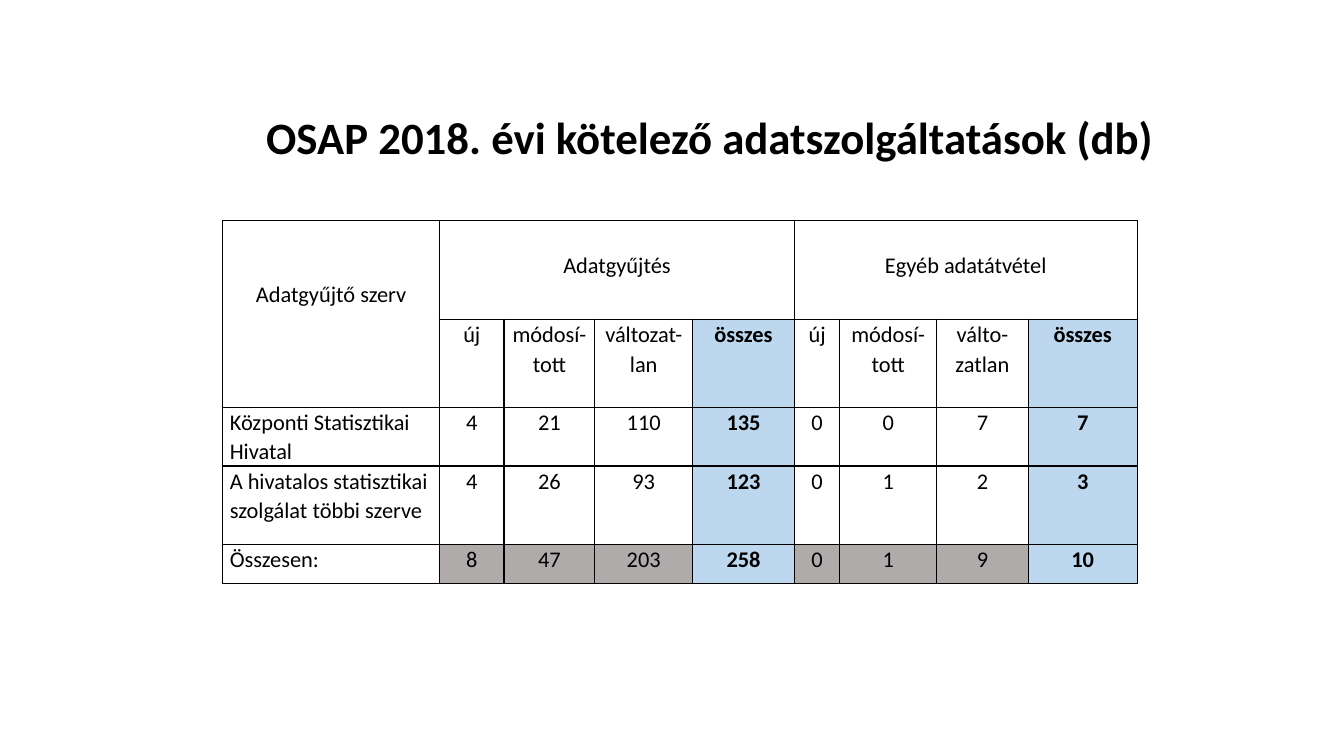
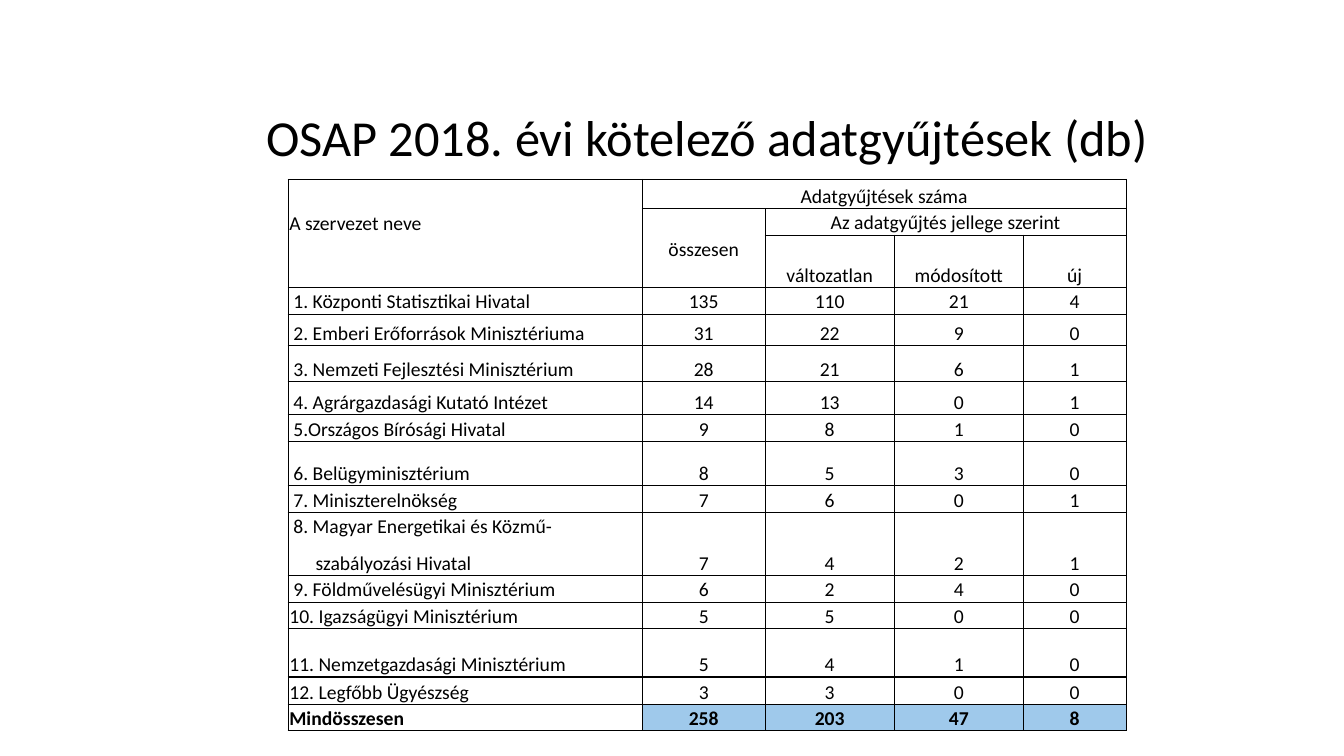
from dataclasses import dataclass
from typing import Callable, Optional

from lxml.etree import SubElement
from pptx import Presentation
from pptx.dml.color import RGBColor
from pptx.enum.text import MSO_ANCHOR, PP_ALIGN
from pptx.oxml.ns import qn
from pptx.presentation import Presentation as Deck
from pptx.slide import Slide
from pptx.table import _Cell as TableCell
from pptx.util import Inches, Pt


# Shared look
@dataclass(frozen=True)
class Theme:
    font: str = "Calibri"
    text: str = "000000"
    border: str = "000000"
    background: str = "FFFFFF"
    total_column: str = "BDD7EE"
    total_row: str = "AFABAB"
    grand_total: str = "9FC9EB"
    border_width: float = 1
    line_spacing: float = 1.07
    title_spacing: float = 0.9


THEME = Theme()
TITLE_ONLY = 5


@dataclass(frozen=True)
class CellStyle:
    """Margins are in inches: left, top, right, bottom."""
    margins: tuple[float, float, float, float]
    fill: str = THEME.background
    bold: bool = False
    align: PP_ALIGN = PP_ALIGN.CENTER
    anchor: MSO_ANCHOR = MSO_ANCHOR.TOP


@dataclass(frozen=True)
class Span:
    row: int
    column: int
    height: int
    width: int


@dataclass(frozen=True)
class TablePage:
    title: str
    title_size: int
    title_bold: bool
    left: float
    top: float
    columns: list[float]
    rows: list[float]
    texts: list[list[Optional[str]]]
    spans: list[Span]
    text_size: int
    space_after: int
    style: Callable[[int, int], CellStyle]


# First page: obligatory data supplies
SUPPLY_TEXTS = [
    ["Adatgyűjtő szerv", "Adatgyűjtés", None, None, None, "Egyéb adatátvétel", None, None, None],
    [None, "új", "módosí-tott", "változat-lan", "összes", "új", "módosí-tott", "válto-zatlan", "összes"],
    ["Központi Statisztikai Hivatal", "4", "21", "110", "135", "0", "0", "7", "7"],
    ["A hivatalos statisztikai szolgálat többi szerve", "4", "26", "93", "123", "0", "1", "2", "3"],
    ["Összesen:", "8", "47", "203", "258", "0", "1", "9", "10"],
]


def supply_style(row: int, column: int) -> CellStyle:
    is_total = row > 0 and column in (4, 8)
    fill = THEME.background
    if is_total:
        fill = THEME.total_column
    elif row == len(SUPPLY_TEXTS) - 1 and column > 0:
        fill = THEME.total_row
    top = 0 if row > 0 else 0.29 if column > 0 else 0.58
    is_label = column == 0 and row > 1
    return CellStyle((0.07, top, 0.07, 0), fill, is_total,
                     PP_ALIGN.LEFT if is_label else PP_ALIGN.CENTER)


# Second page: obligatory data collections by organisation
COLLECTION_TEXTS = [
    ["A szervezet neve", "Adatgyűjtések száma", None, None, None],
    [None, "összesen", "Az adatgyűjtés jellege szerint", None, None],
    [None, None, "változatlan", "módosított", "új"],
    ["1. Központi Statisztikai Hivatal", "135", "110", "21", "4"],
    ["2. Emberi Erőforrások Minisztériuma", "31", "22", "9", "0"],
    ["3. Nemzeti Fejlesztési Minisztérium", "28", "21", "6", "1"],
    ["4. Agrárgazdasági Kutató Intézet", "14", "13", "0", "1"],
    ["5.Országos Bírósági Hivatal", "9", "8", "1", "0"],
    ["6. Belügyminisztérium", "8", "5", "3", "0"],
    ["7. Miniszterelnökség", "7", "6", "0", "1"],
    ["8. Magyar Energetikai és Közmű-\nszabályozási Hivatal", "7", "4", "2", "1"],
    ["9. Földművelésügyi Minisztérium", "6", "2", "4", "0"],
    ["10. Igazságügyi Minisztérium", "5", "5", "0", "0"],
    ["11. Nemzetgazdasági Minisztérium", "5", "4", "1", "0"],
    ["12. Legfőbb Ügyészség", "3", "3", "0", "0"],
    ["Mindösszesen", "258", "203", "47", "8"],
]


def collection_style(row: int, column: int) -> CellStyle:
    is_total = row == len(COLLECTION_TEXTS) - 1
    is_label = column == 0
    is_heading = row == 0 and is_label
    has_one_digit = is_label and 3 <= row <= 11
    is_middle = is_heading or (row, column) == (1, 1)
    return CellStyle(
        (0.05 if has_one_digit else 0.01, 0.01, 0.01, 0.22 if is_heading else 0),
        THEME.grand_total if is_total and not is_label else THEME.background,
        is_total,
        PP_ALIGN.LEFT if is_label else PP_ALIGN.CENTER,
        MSO_ANCHOR.MIDDLE if is_middle else MSO_ANCHOR.BOTTOM,
    )


PAGES = [
    TablePage(
        title="OSAP 2018. évi kötelező adatszolgáltatások (db)",
        title_size=32, title_bold=True, left=2.21, top=2.19,
        columns=[2.15, 0.64, 0.9, 0.97, 1.01, 0.45, 0.96, 0.91, 1.08],
        rows=[0.98, 0.87, 0.58, 0.78, 0.39],
        texts=SUPPLY_TEXTS,
        spans=[Span(0, 0, 2, 1), Span(0, 1, 1, 4), Span(0, 5, 1, 4)],
        text_size=16, space_after=0, style=supply_style,
    ),
    TablePage(
        title="OSAP 2018. évi kötelező adatgyűjtések (db)",
        title_size=36, title_bold=False, left=2.86, top=1.78,
        columns=[3.51, 1.22, 1.28, 1.28, 1.02],
        rows=[0.29, 0.26, 0.52, 0.26, 0.31, 0.36, 0.33, 0.26,
              0.44, 0.26, 0.62, 0.26, 0.26, 0.48, 0.27, 0.26],
        texts=COLLECTION_TEXTS,
        spans=[Span(0, 0, 3, 1), Span(0, 1, 1, 4), Span(1, 1, 2, 1), Span(1, 2, 1, 3)],
        text_size=14, space_after=8, style=collection_style,
    ),
]


# Drawing
def set_font(para, size: int, bold: bool) -> None:
    para.font.name = THEME.font
    para.font.size = Pt(size)
    para.font.bold = bold
    para.font.color.rgb = RGBColor.from_string(THEME.text)


def add_borders(cell: TableCell) -> None:
    properties = cell._tc.get_or_add_tcPr()
    for position, side in enumerate(("lnL", "lnR", "lnT", "lnB")):
        line = properties.makeelement(qn(f"a:{side}"), {"w": str(Pt(THEME.border_width))})
        fill = SubElement(line, qn("a:solidFill"))
        SubElement(fill, qn("a:srgbClr"), val=THEME.border)
        properties.insert(position, line)


def fill_cell(cell: TableCell, text: str, style: CellStyle, page: TablePage) -> None:
    left, top, right, bottom = style.margins
    cell.margin_left, cell.margin_top = Inches(left), Inches(top)
    cell.margin_right, cell.margin_bottom = Inches(right), Inches(bottom)
    cell.vertical_anchor = style.anchor
    cell.fill.solid()
    cell.fill.fore_color.rgb = RGBColor.from_string(style.fill)
    add_borders(cell)
    cell.text = text
    for number, para in enumerate(cell.text_frame.paragraphs):
        if number > 0:
            # A continued label lines up under its name
            para._p.get_or_add_pPr().set("marL", str(Inches(0.22)))
        para.alignment = style.align
        para.line_spacing = THEME.line_spacing
        para.space_after = Pt(page.space_after)
        set_font(para, page.text_size, style.bold)


def add_title(slide: Slide, page: TablePage) -> None:
    title = slide.shapes.title
    title.left, title.top = Inches(2.54), Inches(0.93)
    title.width, title.height = Inches(9.07), Inches(0.92)
    title.text_frame.text = page.title
    title.text_frame.vertical_anchor = MSO_ANCHOR.MIDDLE
    para = title.text_frame.paragraphs[0]
    para.alignment = PP_ALIGN.LEFT
    para.line_spacing = THEME.title_spacing
    set_font(para, page.title_size, page.title_bold)


def add_data_table(slide: Slide, page: TablePage) -> None:
    table = slide.shapes.add_table(
        len(page.rows), len(page.columns), Inches(page.left), Inches(page.top),
        Inches(sum(page.columns)), Inches(sum(page.rows))).table
    table.first_row = table.horz_banding = False
    for column, width in zip(table.columns, page.columns):
        column.width = Inches(width)
    for row, height in zip(table.rows, page.rows):
        row.height = Inches(height)
    for row, texts in enumerate(page.texts):
        for column, text in enumerate(texts):
            fill_cell(table.cell(row, column), text or "", page.style(row, column), page)
    for span in page.spans:
        last = table.cell(span.row + span.height - 1, span.column + span.width - 1)
        table.cell(span.row, span.column).merge(last)


def add_page(deck: Deck, page: TablePage) -> None:
    slide = deck.slides.add_slide(deck.slide_layouts[TITLE_ONLY])
    slide.background.fill.solid()
    slide.background.fill.fore_color.rgb = RGBColor.from_string(THEME.background)
    add_title(slide, page)
    add_data_table(slide, page)


def main() -> None:
    deck = Presentation()
    deck.slide_width, deck.slide_height = Inches(13.33), Inches(7.5)
    for page in PAGES:
        add_page(deck, page)
    deck.save("out.pptx")


if __name__ == "__main__":
    main()
